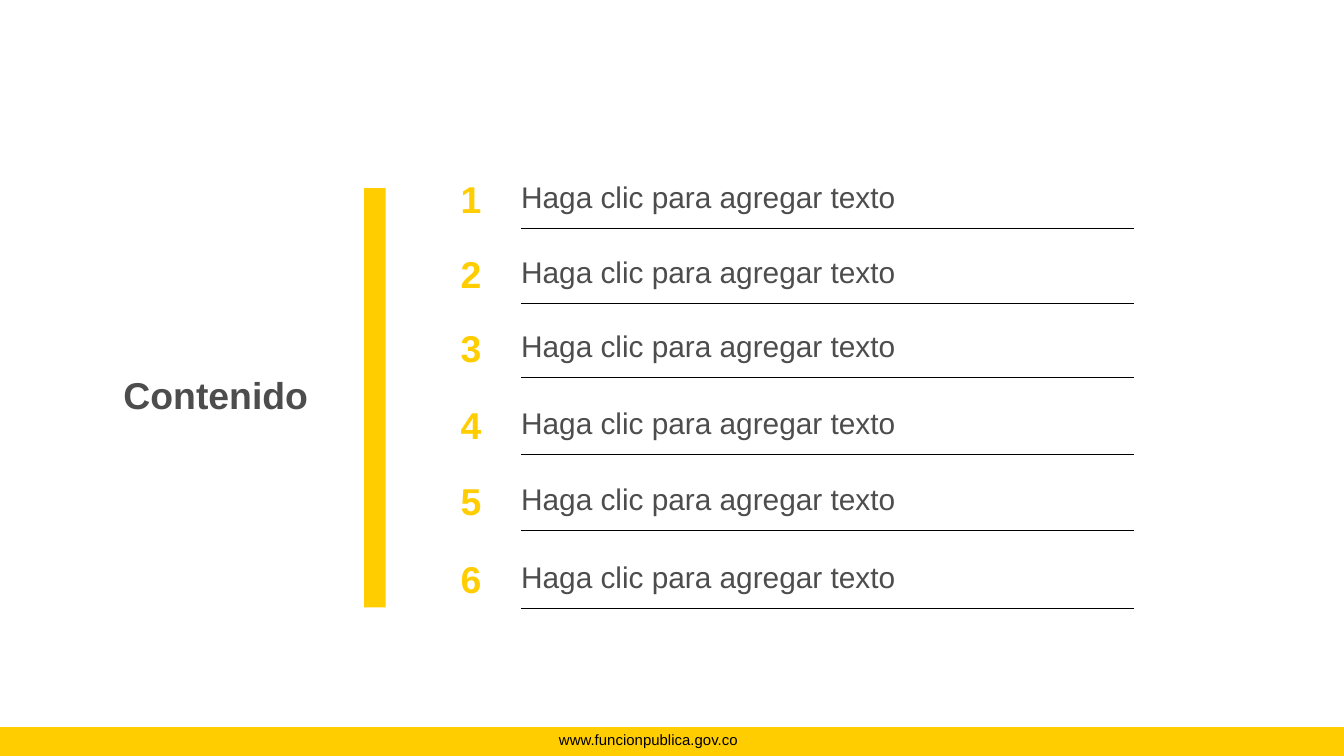
import pptx
import pptx.dml.color
import pptx.enum.shapes
import pptx.enum.text
import pptx.oxml.ns
import pptx.util
from lxml import etree

Inches = pptx.util.Inches
Pt = pptx.util.Pt
RGBColor = pptx.dml.color.RGBColor
Align = pptx.enum.text.PP_ALIGN

YELLOW = RGBColor(0xFF, 0xCD, 0x00)
GRAY = RGBColor(0x4D, 0x4D, 0x4D)
BLACK = RGBColor(0x00, 0x00, 0x00)

ENTRY_TEXT = "Haga clic para agregar texto"
ENTRY_TOPS = [1.26, 1.82, 2.37, 2.94, 3.51, 4.09]


class ContentsPage:
    """Draws the elements of a contents page in one shared style."""

    font_name = "Arial"

    def __init__(self, deck):
        self.page = deck.slides.add_slide(deck.slide_layouts[6])

    def bar(self, left, top, width, height):
        shape = self.page.shapes.add_shape(
            pptx.enum.shapes.MSO_SHAPE.RECTANGLE,
            Inches(left), Inches(top), Inches(width), Inches(height))
        shape.shadow.inherit = False
        shape.fill.solid()
        shape.fill.fore_color.rgb = YELLOW
        shape.line.fill.background()

    def text(self, words, left, top, width, height, size, color,
             bold=False, align=Align.LEFT):
        box = self.page.shapes.add_textbox(
            Inches(left), Inches(top), Inches(width), Inches(height))
        box.text_frame.word_wrap = True
        box.text_frame.auto_size = pptx.enum.text.MSO_AUTO_SIZE.SHAPE_TO_FIT_TEXT
        para = box.text_frame.paragraphs[0]
        para.alignment = align
        span = para.add_run()
        span.text = words
        span.font.name = self.font_name
        span.font.size = Pt(size)
        span.font.bold = bold
        span.font.color.rgb = color

    def rule(self, left, right, top):
        line = self.page.shapes.add_connector(
            pptx.enum.shapes.MSO_CONNECTOR.STRAIGHT,
            Inches(left), Inches(top), Inches(right), Inches(top))
        line.line.color.rgb = BLACK
        line.line.width = Pt(0.5)
        etree.SubElement(line._element.spPr, pptx.oxml.ns.qn("a:effectLst"))

    def entry(self, number, words, top):
        self.text(str(number), 3.32, top, 0.37, 0.44, 20, YELLOW, True, Align.CENTER)
        self.text(words, 3.78, top + 0.02, 3.33, 0.37, 16, GRAY)
        self.rule(3.88, 8.44, top + 0.44)


def main():
    deck = pptx.Presentation()
    deck.slide_width = Inches(10)
    deck.slide_height = deck.slide_width * 9 // 16

    contents = ContentsPage(deck)
    contents.bar(0, 5.41, 10, 0.22)
    contents.text("www.funcionpublica.gov.co", 3.63, 5.39, 2.39, 0.24, 8, BLACK,
                  align=Align.CENTER)
    for number, top in enumerate(ENTRY_TOPS, start=1):
        contents.entry(number, ENTRY_TEXT, top)
    contents.text("Contenido", 0.82, 2.72, 1.76, 0.44, 20, GRAY, True)
    contents.bar(2.71, 1.4, 0.16, 3.12)

    deck.save("out.pptx")


if __name__ == "__main__":
    main()
